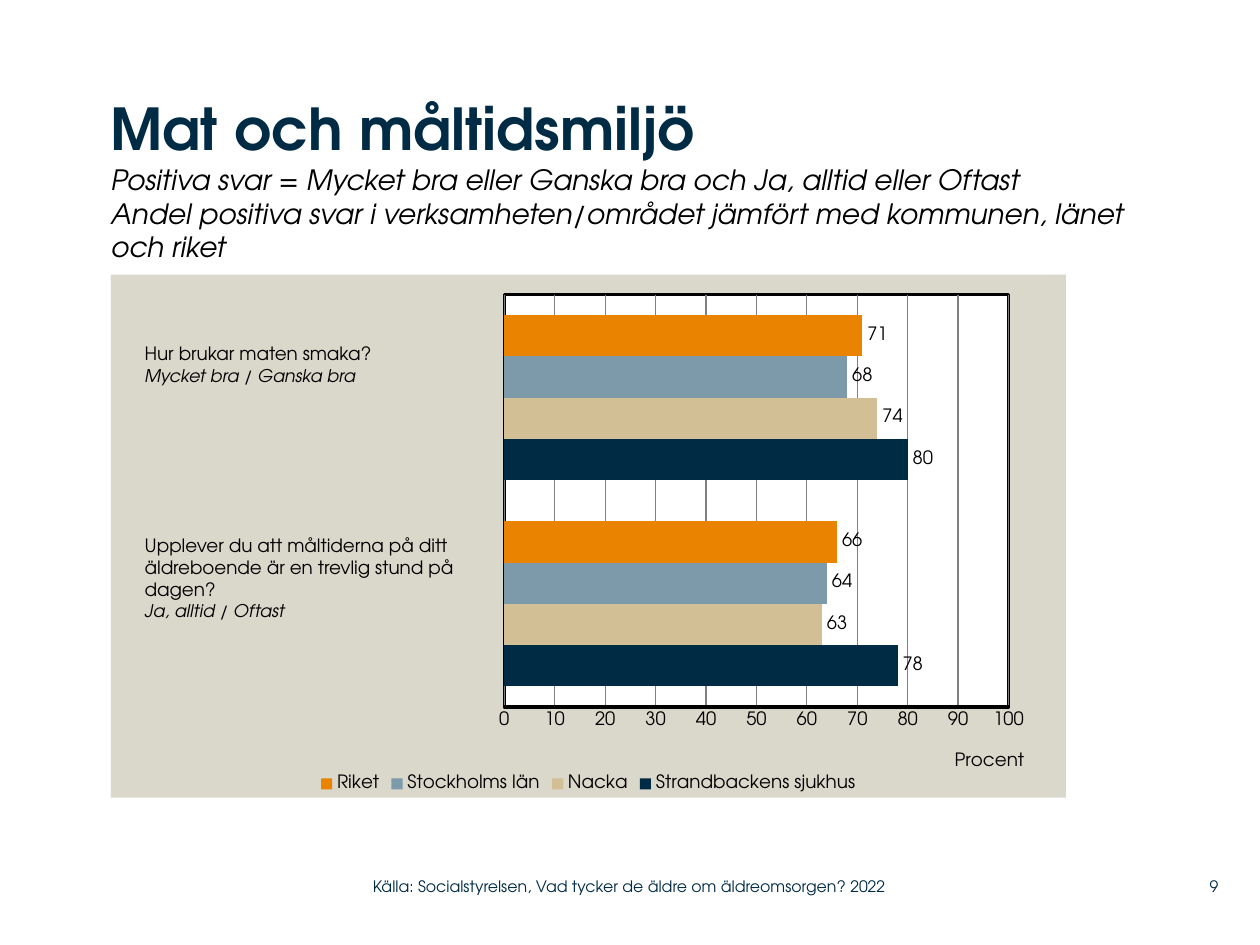
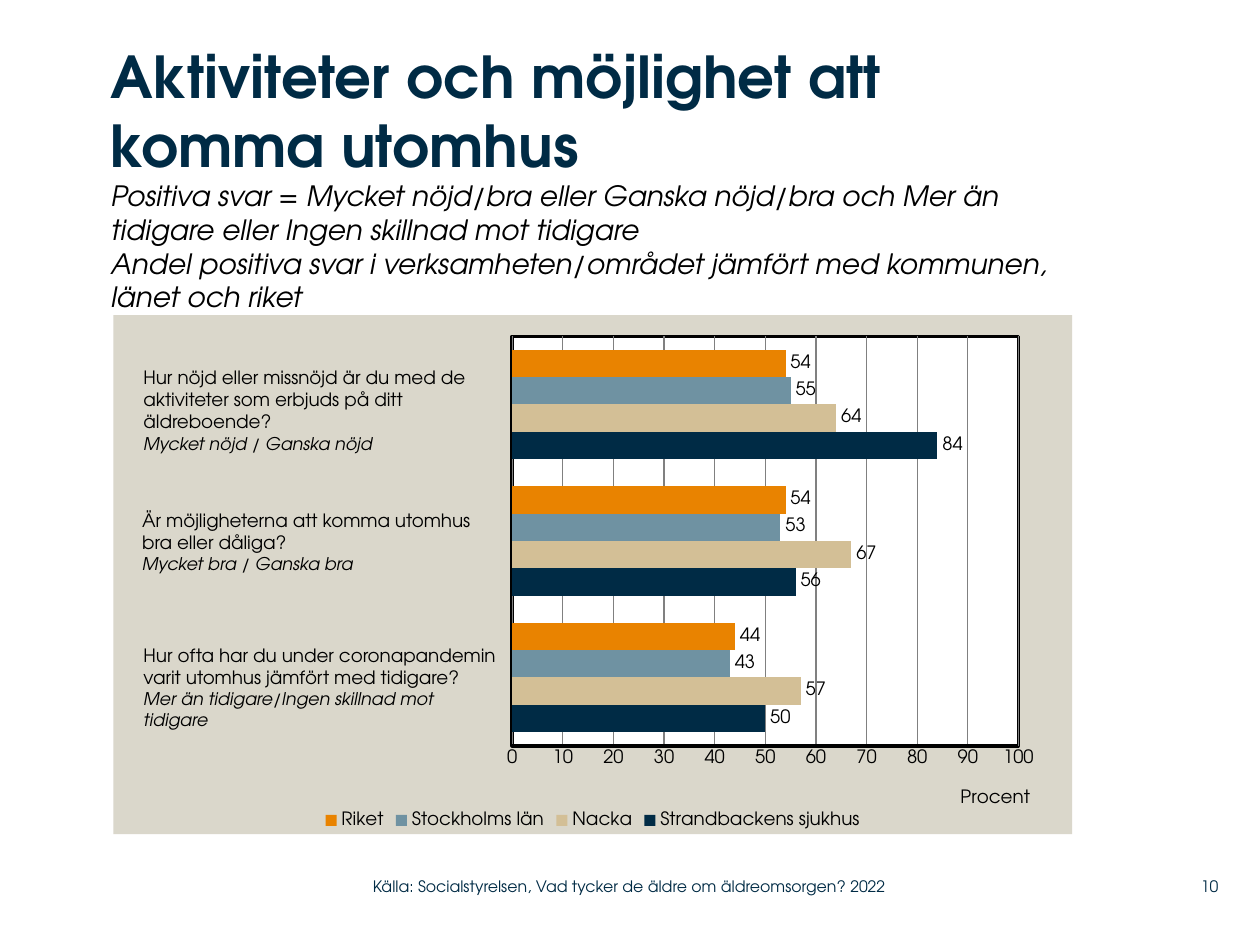
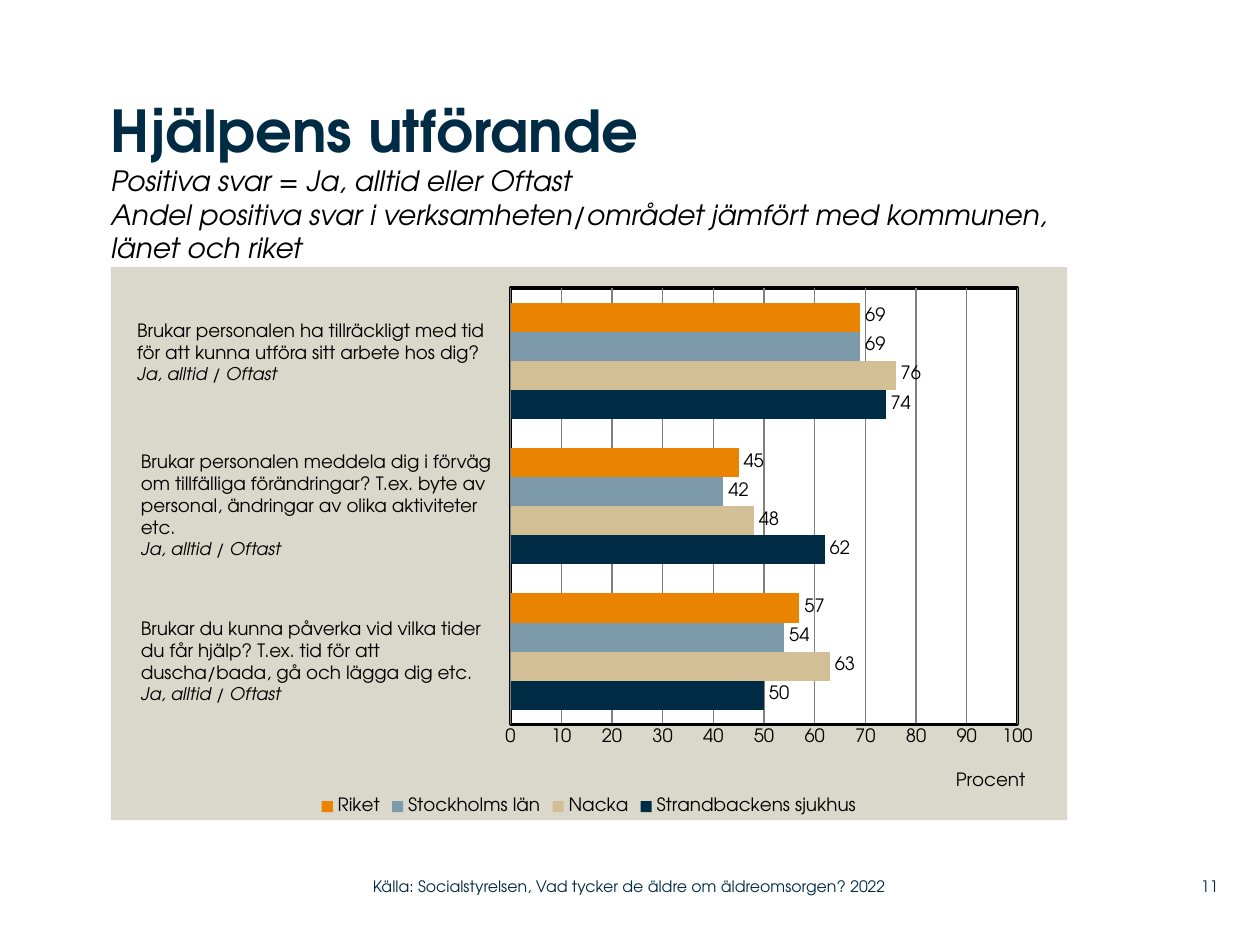
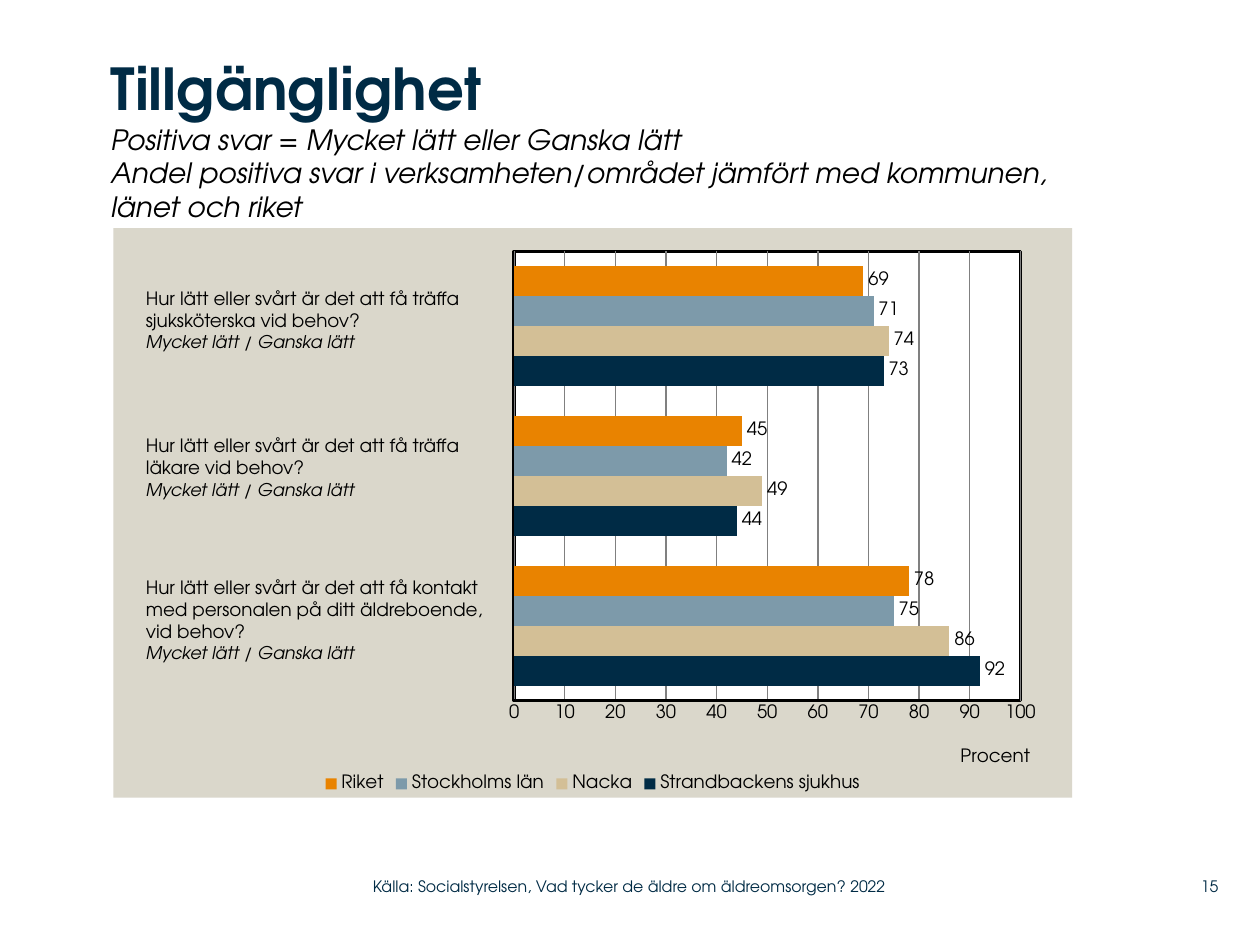
from dataclasses import dataclass
from typing import NamedTuple

from lxml.etree import SubElement
from pptx import Presentation
from pptx.chart.chart import Chart
from pptx.chart.data import CategoryChartData
from pptx.dml.color import RGBColor
from pptx.enum.chart import (
    XL_CHART_TYPE as ChartType,
    XL_LABEL_POSITION as LabelPosition,
    XL_LEGEND_POSITION as LegendPosition,
    XL_TICK_MARK as TickMark,
)
from pptx.enum.text import MSO_ANCHOR as Anchor, MSO_AUTO_SIZE as AutoSize, PP_ALIGN as Align
from pptx.oxml import parse_xml
from pptx.oxml.ns import nsdecls, qn
from pptx.slide import Slide
from pptx.text.text import TextFrame
from pptx.util import Emu, Pt

# Shared look: 100 px to the inch
PX = 9144
FONT = "TeX Gyre Adventor"
NAVY = RGBColor(0x00, 0x2B, 0x45)
SAND = RGBColor(0xD3, 0xBF, 0x96)
STEEL = RGBColor(0x7D, 0x9A, 0xAA)
DEEP_STEEL = RGBColor(0x6F, 0x92, 0xA2)
ORANGE = RGBColor(0xE9, 0x83, 0x00)
PANEL = RGBColor(0xDA, 0xD7, 0xCB)
GRID = RGBColor(0x80, 0x80, 0x80)
BLACK = RGBColor(0x00, 0x00, 0x00)
WHITE = RGBColor(0xFF, 0xFF, 0xFF)

COMPARISON = "Andel positiva svar i verksamheten/området jämfört med kommunen, länet och riket"
SOURCE = "Källa: Socialstyrelsen, Vad tycker de äldre om äldreomsorgen? 2022"
RESPONDENTS = ("Strandbackens sjukhus", "Nacka", "Stockholms län", "Riket")


class Box(NamedTuple):
    left: int
    top: int
    width: int
    height: int

    def emu(self) -> list[Emu]:
        return [Emu(length * PX) for length in self]


class Style(NamedTuple):
    size: float
    color: RGBColor = BLACK
    bold: bool = False
    italic: bool = False


TITLE = Style(33, NAVY, bold=True)
SUBTITLE = Style(16, italic=True)
QUESTION = Style(10.5)
ANSWERS = Style(10, italic=True)
FOOTER = Style(9, NAVY)

SOURCE_BOX = Box(296, 689, 443, 29)
NUMBER_BOX = Box(920, 689, 47, 29)


@dataclass(frozen=True)
class Question:
    box: Box
    wording: tuple[str, ...]
    answers: str


@dataclass(frozen=True)
class Survey:
    number: int
    title: str
    title_box: Box
    positive: str
    chart_box: Box
    plot: tuple[float, float, float, float]
    percentages: tuple[tuple[int, ...], ...]  # one row per respondent, lowest question first
    questions: tuple[Question, ...]
    county_color: RGBColor = STEEL


SURVEYS = (
    Survey(
        9, "Mat och måltidsmiljö", Box(88, 74, 842, 144),
        "Positiva svar = Mycket bra eller Ganska bra och Ja, alltid eller Oftast",
        Box(88, 218, 758, 415), (0.412, 0.038, 0.528, 0.789),
        ((78, 80), (63, 74), (64, 68), (66, 71)),
        (
            Question(Box(105, 267, 277, 63), ("Hur brukar maten smaka?",),
                     "Mycket bra / Ganska bra"),
            Question(Box(105, 419, 277, 98),
                     ("Upplever du att måltiderna på ditt äldreboende är en trevlig stund på",
                      "dagen?"),
                     "Ja, alltid / Oftast"),
        ),
    ),
    Survey(
        10, "Aktiviteter och möjlighet att komma utomhus", Box(88, 32, 780, 189),
        "Positiva svar = Mycket nöjd/bra eller Ganska nöjd/bra och Mer än tidigare"
        " eller Ingen skillnad mot tidigare",
        Box(90, 250, 761, 412), (0.416, 0.041, 0.528, 0.789),
        ((50, 56, 84), (57, 67, 64), (43, 53, 55), (44, 54, 54)),
        (
            Question(Box(104, 286, 300, 98),
                     ("Hur nöjd eller missnöjd är du med de aktiviteter som erbjuds"
                      " på ditt äldreboende?",),
                     "Mycket nöjd / Ganska nöjd"),
            Question(Box(103, 399, 301, 81),
                     ("Är möjligheterna att komma utomhus", "bra eller dåliga?"),
                     "Mycket bra / Ganska bra"),
            Question(Box(104, 506, 301, 79),
                     ("Hur ofta har du under coronapandemin varit utomhus"
                      " jämfört med tidigare?",),
                     "Mer än tidigare/Ingen skillnad mot tidigare"),
        ),
        county_color=DEEP_STEEL,
    ),
    Survey(
        11, "Hjälpens utförande", Box(88, 75, 779, 121),
        "Positiva svar = Ja, alltid eller Oftast",
        Box(88, 212, 759, 439), (0.418, 0.038, 0.53, 0.789),
        ((50, 62, 74), (63, 48, 76), (54, 42, 69), (57, 45, 69)),
        (
            Question(Box(99, 248, 297, 81),
                     ("Brukar personalen ha tillräckligt med tid",
                      "för att kunna utföra sitt arbete hos dig?"),
                     "Ja, alltid / Oftast"),
            Question(Box(102, 352, 299, 98),
                     ("Brukar personalen meddela dig i förväg om tillfälliga förändringar?"
                      " T.ex. byte av personal, ändringar av olika aktiviteter etc.",),
                     "Ja, alltid / Oftast"),
            Question(Box(102, 485, 297, 81),
                     ("Brukar du kunna påverka vid vilka tider",
                      "du får hjälp? T.ex. tid för att",
                      "duscha/bada, gå och lägga dig etc."),
                     "Ja, alltid / Oftast"),
        ),
    ),
    Survey(
        15, "Tillgänglighet", Box(88, 42, 777, 139),
        "Positiva svar = Mycket lätt eller Ganska lätt",
        Box(90, 181, 761, 452), (0.418, 0.041, 0.528, 0.789),
        ((92, 44, 73), (86, 49, 74), (75, 42, 71), (78, 45, 69)),
        (
            Question(Box(106, 223, 299, 81),
                     ("Hur lätt eller svårt är det att få träffa sjuksköterska vid behov?",),
                     "Mycket lätt / Ganska lätt"),
            Question(Box(106, 340, 293, 81),
                     ("Hur lätt eller svårt är det att få träffa", "läkare vid behov?"),
                     "Mycket lätt / Ganska lätt"),
            Question(Box(106, 452, 301, 98),
                     ("Hur lätt eller svårt är det att få kontakt",
                      "med personalen på ditt äldreboende,", "vid behov?"),
                     "Mycket lätt / Ganska lätt"),
        ),
    ),
)


# Text
def apply_style(font, style: Style) -> None:
    font.name = FONT
    font.size = Pt(style.size)
    font.bold = style.bold
    font.italic = style.italic
    font.color.rgb = style.color


def add_text(slide: Slide, box: Box, lines: list[tuple[str, Style]],
             inset: bool = False) -> TextFrame:
    frame = slide.shapes.add_textbox(*box.emu()).text_frame
    frame.word_wrap = True
    if not inset:
        frame.margin_left = frame.margin_right = frame.margin_top = frame.margin_bottom = 0
    frame.text = "\n".join(wording for wording, _ in lines)
    for paragraph, (_, style) in zip(frame.paragraphs, lines):
        for run in paragraph.runs:
            apply_style(run.font, style)
    return frame


def add_question(slide: Slide, question: Question) -> None:
    lines = [(wording, QUESTION) for wording in question.wording]
    frame = add_text(slide, question.box, lines + [(question.answers, ANSWERS)], inset=True)
    frame.auto_size = AutoSize.SHAPE_TO_FIT_TEXT


def add_footer(slide: Slide, number: int) -> None:
    add_text(slide, SOURCE_BOX, [(SOURCE, FOOTER)]).vertical_anchor = Anchor.MIDDLE
    page = add_text(slide, NUMBER_BOX, [(str(number), FOOTER)])
    page.vertical_anchor = Anchor.MIDDLE
    page.paragraphs[0].alignment = Align.RIGHT


# Chart
def set_layout(parent, places: dict[str, float], inner: bool = False) -> None:
    layout = parent.find(qn("c:layout"))
    if layout is None:
        layout = parent.makeelement(qn("c:layout"))
        parent.insert(0, layout)
    manual = SubElement(layout, qn("c:manualLayout"))
    if inner:
        SubElement(manual, qn("c:layoutTarget")).set("val", "inner")
    for mode in ("xMode", "yMode"):
        SubElement(manual, qn(f"c:{mode}")).set("val", "edge")
    for name, value in places.items():
        SubElement(manual, qn(f"c:{name}")).set("val", str(value))


def area_format(fill: RGBColor, outline: str):
    return parse_xml(
        f'<c:spPr {nsdecls("c", "a")}><a:solidFill><a:srgbClr val="{fill}"/></a:solidFill>'
        f"{outline}</c:spPr>"
    )


def format_areas(chart: Chart, plot: tuple[float, float, float, float]) -> None:
    chart_part = chart.element.find(qn("c:chart"))
    chart_part.addnext(area_format(PANEL, "<a:ln><a:noFill/></a:ln>"))
    plot_area = chart_part.find(qn("c:plotArea"))
    set_layout(plot_area, dict(zip("xywh", plot)), inner=True)
    frame = (f'<a:ln w="{Pt(2)}"><a:solidFill><a:srgbClr val="{BLACK}"/>'
             "</a:solidFill></a:ln>")
    plot_area.append(area_format(WHITE, frame))


def format_axes(chart: Chart) -> None:
    chart.category_axis.visible = False
    percent = chart.value_axis
    percent.minimum_scale, percent.maximum_scale, percent.major_unit = 0, 100, 10
    percent.major_tick_mark = percent.minor_tick_mark = TickMark.NONE
    percent.format.line.color.rgb = BLACK
    percent.format.line.width = Pt(2)
    percent.major_gridlines.format.line.color.rgb = GRID
    percent.major_gridlines.format.line.width = Pt(0.75)
    apply_style(percent.tick_labels.font, QUESTION)
    caption = percent.axis_title
    caption.text_frame.text = "Procent"
    apply_style(caption.text_frame.paragraphs[0].runs[0].font, QUESTION)
    set_layout(caption.text_frame._txBody.getparent().getparent(), {"x": 0.88, "y": 0.905})


def add_survey_chart(slide: Slide, survey: Survey) -> None:
    answers = CategoryChartData(number_format="0")
    answers.categories = [str(i + 1) for i in range(len(survey.questions))]
    for respondent, values in zip(RESPONDENTS, survey.percentages):
        answers.add_series(respondent, values)
    chart = slide.shapes.add_chart(
        ChartType.BAR_CLUSTERED, *survey.chart_box.emu(), answers).chart
    chart.has_title = False
    apply_style(chart.font, QUESTION)
    chart.has_legend = True
    chart.legend.position = LegendPosition.BOTTOM
    chart.legend.include_in_layout = False
    apply_style(chart.legend.font, QUESTION)

    bars = chart.plots[0]
    bars.gap_width = 100
    bars.overlap = 0
    bars.vary_by_categories = False
    for series, color in zip(bars.series, (NAVY, SAND, survey.county_color, ORANGE)):
        series.format.fill.solid()
        series.format.fill.fore_color.rgb = color
        series.invert_if_negative = False
        labels = series.data_labels
        labels.show_value = True
        labels.position = LabelPosition.OUTSIDE_END
        apply_style(labels.font, QUESTION)

    format_axes(chart)
    format_areas(chart, survey.plot)


def add_survey_slide(deck, survey: Survey) -> None:
    slide = deck.slides.add_slide(deck.slide_layouts[6])
    add_text(slide, survey.title_box, [
        (survey.title, TITLE), (survey.positive, SUBTITLE), (COMPARISON, SUBTITLE)])
    add_survey_chart(slide, survey)
    for question in survey.questions:
        add_question(slide, question)
    add_footer(slide, survey.number)


def main() -> None:
    deck = Presentation()
    deck.slide_width, deck.slide_height = Emu(1000 * PX), Emu(750 * PX)
    for survey in SURVEYS:
        add_survey_slide(deck, survey)
    deck.save("out.pptx")


if __name__ == "__main__":
    main()
